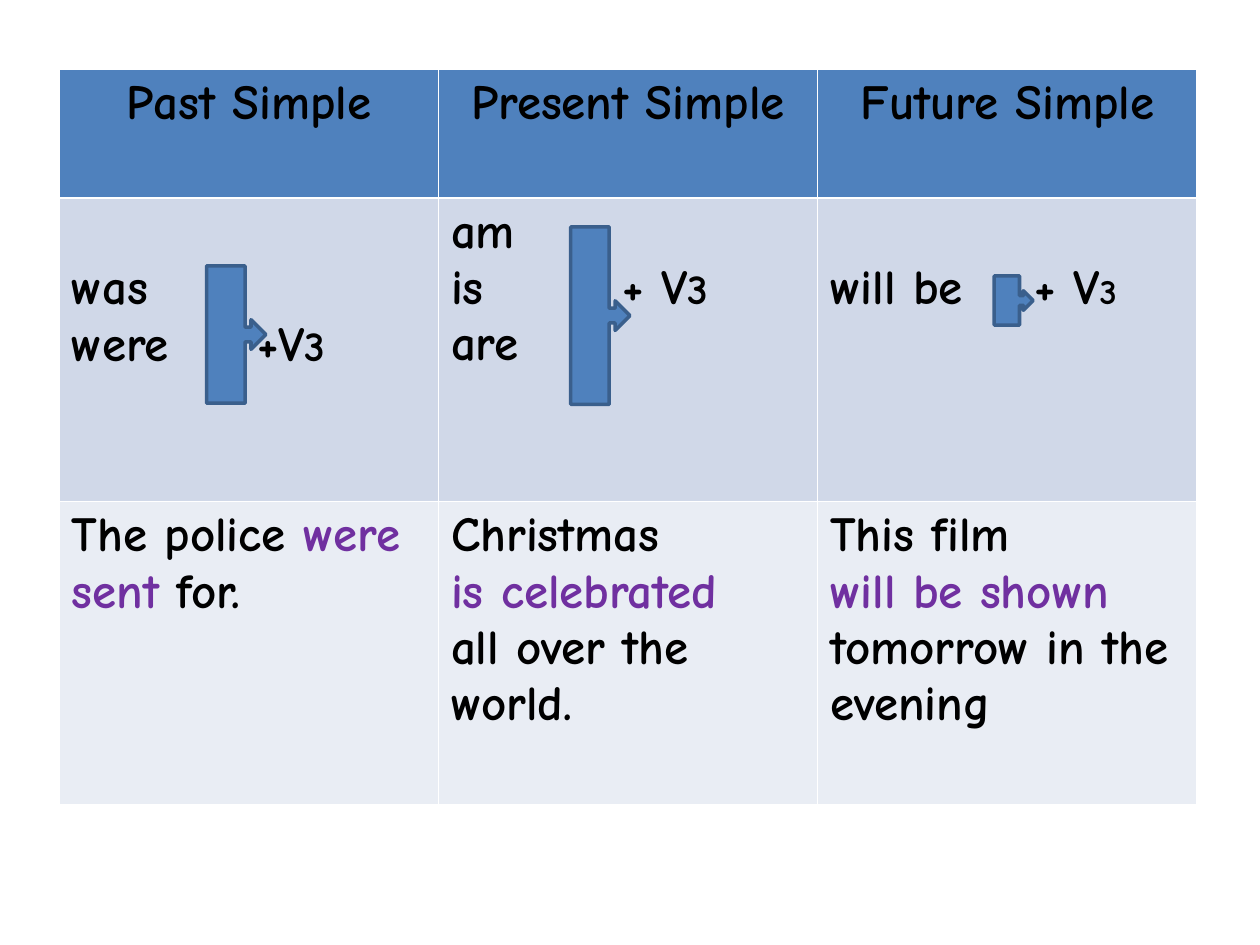
"""Build a slide comparing the passive voice in three simple tenses."""
from lxml import etree
from pptx import Presentation
from pptx.dml.color import RGBColor
from pptx.enum import shapes, text
from pptx.oxml import ns
from pptx.util import Inches, Pt

BLACK, PURPLE, BLUE = "000000", "7030A0", "4F81BD"


def color(value):
    """Turn a hex string into a colour."""
    return RGBColor.from_string(value)


class TenseSlide:
    """Hold the style and the current slide."""

    font = "Comic Neue"
    size = 28
    line_height = 0.45

    def __init__(self, deck):
        """Add an empty page to the deck."""
        self.page = deck.slides.add_slide(deck.slide_layouts[6])

    def table(self, left, top, column_width, row_heights, fills, rows):
        """Add the table and return it with its cells filled."""
        count = len(rows[0])
        frame = self.page.shapes.add_table(
            len(rows), count, Inches(left), Inches(top),
            Inches(column_width * count), Inches(sum(row_heights)))
        table = frame.table
        for column in table.columns:
            column.width = Inches(column_width)
        for row, height in zip(table.rows, row_heights):
            row.height = Inches(height)
        for row, fill, contents in zip(table.rows, fills, rows):
            for cell, paragraphs in zip(row.cells, contents):
                cell.fill.solid()
                cell.fill.fore_color.rgb = color(fill)
                self.add_text(cell.text_frame, paragraphs)
        return table

    def add_text(self, frame, paragraphs):
        """Add paragraphs, each a list of (text, size, colour) spans."""
        for index, spans in enumerate(paragraphs):
            para = frame.add_paragraph() if index else frame.paragraphs[0]
            for words, size, shade in spans:
                span = para.add_run()
                span.text = words
                span.font.name = self.font
                span.font.size = Pt(size)
                span.font.bold = True
                span.font.color.rgb = color(shade)

    def tab_stop(self, cell, position):
        """Set one left tab stop in every paragraph of a cell."""
        for para in cell.text_frame.paragraphs:
            properties = para._p.get_or_add_pPr()
            stops = etree.SubElement(properties, ns.qn("a:tabLst"))
            etree.SubElement(stops, ns.qn("a:tab"),
                             pos=str(Inches(position)), algn="l")

    def callout(self, left, top, width, height):
        """Add an arrow callout."""
        box = self.page.shapes.add_shape(
            shapes.MSO_SHAPE.RIGHT_ARROW_CALLOUT,
            Inches(left), Inches(top), Inches(width), Inches(height))
        box.shadow.inherit = False
        box.fill.solid()
        box.fill.fore_color.rgb = color(BLUE)
        box.line.color.rgb = color("3A5F8C")
        box.line.width = Pt(2)


def plain(words, shade=BLACK):
    """Return a span of normal size."""
    return words, TenseSlide.size, shade


def formula(words, digit_size):
    """Return a line that ends in a small 3."""
    return [plain(words), ("3", digit_size, BLACK)]


def main():
    """Build and save the deck."""
    deck = Presentation()
    deck.slide_width, deck.slide_height = Inches(10), Inches(7.5)
    slide = TenseSlide(deck)

    headings = [[[plain(f"{tense} Simple")]] for tense in ("Past", "Present", "Future")]
    forms = [
        [[plain("was")], formula("were\t+V", 24)],
        [[plain("am")], formula("is\t+ V", 24), [plain("are")]],
        [formula("will be\t+ V", 20)],
    ]
    examples = [
        [[plain("The police "), plain("were sent ", PURPLE), plain("for.")]],
        [[plain("Christmas")], [plain("is celebrated", PURPLE)],
         [plain("all over the world.")]],
        [[plain("This film")], [plain("will be shown", PURPLE)],
         [plain("tomorrow in the evening")]],
    ]
    table = slide.table(0.47, 0.55, 3.01, (1.02, 2.41, 2.41),
                        (BLUE, "D0D8E8", "E9EDF4"), (headings, forms, examples))

    for cell in table.rows[0].cells:
        cell.text_frame.paragraphs[0].alignment = text.PP_ALIGN.CENTER
    for cell, position in zip(table.rows[1].cells, (1.47, 1.36, 1.62)):
        slide.tab_stop(cell, position)
    for column in (0, 2):
        table.cell(1, column).margin_top = Inches(0.05 + slide.line_height)

    for place in ((1.64, 2.11, 0.47, 1.09), (4.53, 1.8, 0.47, 1.41),
                  (7.89, 2.19, 0.31, 0.39)):
        slide.callout(*place)
    deck.save("out.pptx")


if __name__ == "__main__":
    main()
